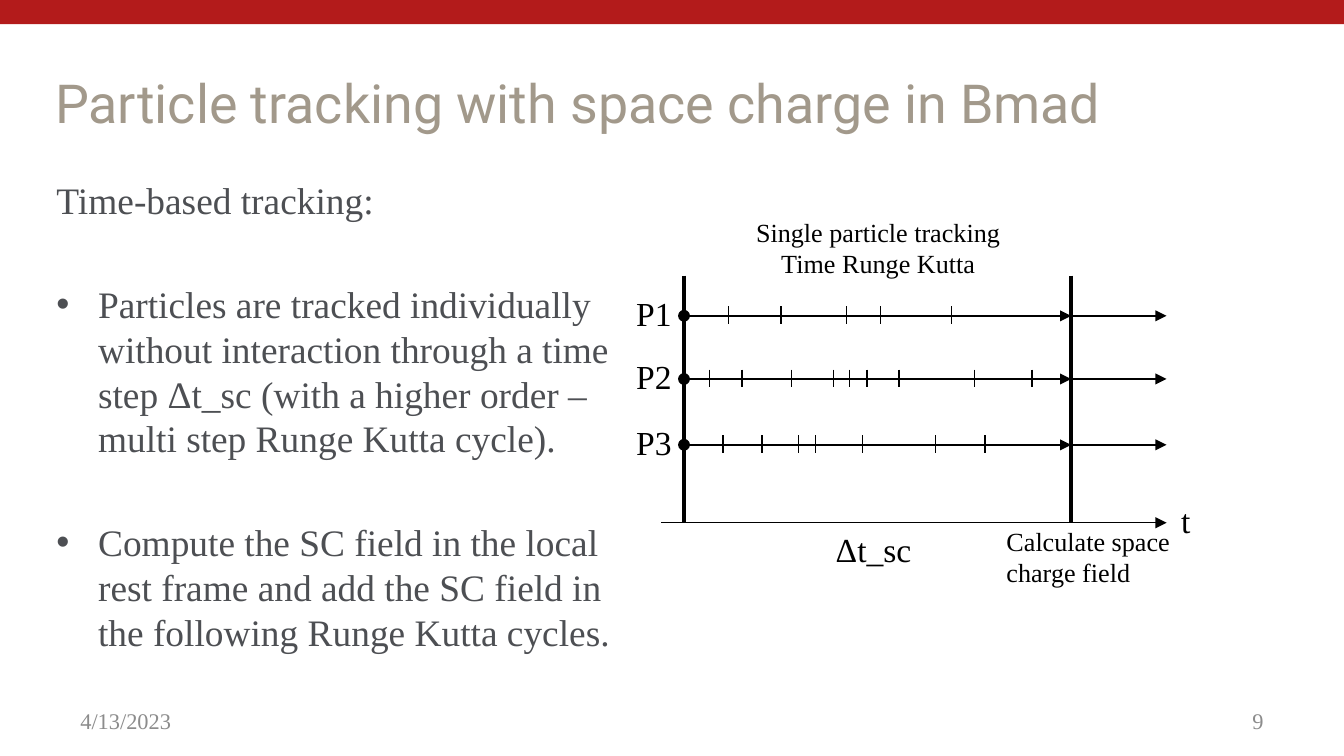
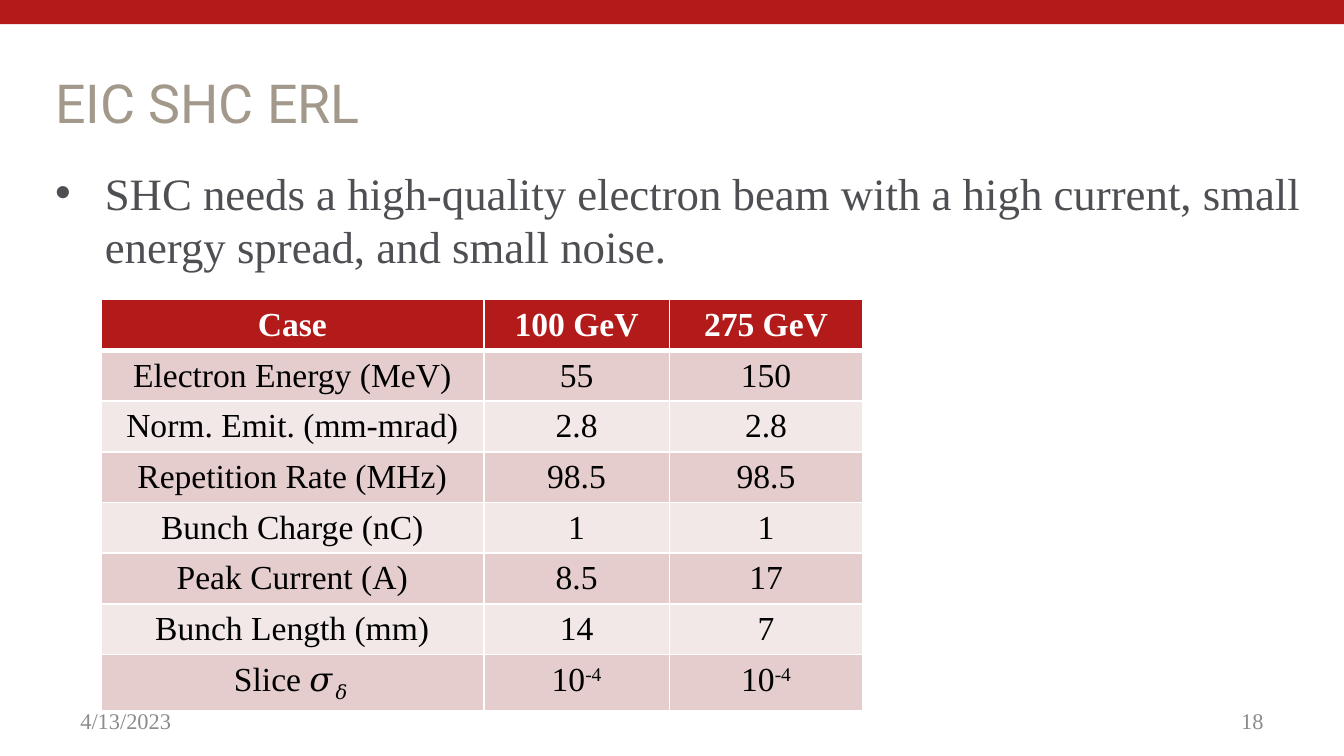
import pptx
import pptx.util
import pptx.dml.color
import pptx.enum.shapes
import pptx.enum.text
import pptx.oxml.ns
import lxml.etree
from dataclasses import dataclass

PX = 9144  # EMU per px, 100 px to the inch


@dataclass(frozen=True)
class Theme:
    red: str = "B31B1B"
    taupe: str = "A2998B"
    slate: str = "4D4F53"
    grey: str = "8C8C8C"
    black: str = "000000"
    white: str = "FFFFFF"
    row_fills: tuple = ("F2E8E8", "E5CDCD")
    heading_font: str = "Roboto"
    text_font: str = "Times New Roman"
    title: float = 28.8
    lead: int = 24
    body: int = 20
    label: int = 18
    caption: int = 14
    footer: int = 12


T = Theme()
RGB = pptx.dml.color.RGBColor.from_string
Pt = pptx.util.Pt
ALIGN = pptx.enum.text.PP_ALIGN
ANCHOR = pptx.enum.text.MSO_ANCHOR
AUTO = pptx.enum.text.MSO_AUTO_SIZE
SHAPE = pptx.enum.shapes.MSO_SHAPE
STRAIGHT = pptx.enum.shapes.MSO_CONNECTOR.STRAIGHT


def write(sp, box, text, size, color, align=ALIGN.LEFT, font=T.text_font,
          anchor=ANCHOR.TOP, fit=AUTO.NONE):
    """Place a text shape and format every run in it."""
    sp.left, sp.top, sp.width, sp.height = [v * PX for v in box]
    tf = sp.text_frame
    tf.text = text
    tf.word_wrap = True
    tf.auto_size = fit
    tf.vertical_anchor = anchor
    for p in tf.paragraphs:
        p.alignment = align
        for r in p.runs:
            r.font.name, r.font.size = font, Pt(size)
            r.font.color.rgb = RGB(color)
    return tf


def line(s, x1, y1, x2, y2, width=0.75, arrow=False):
    """Draw a black straight line, with an arrowhead at its end if asked."""
    c = s.shapes.add_connector(STRAIGHT, x1 * PX, y1 * PX, x2 * PX, y2 * PX)
    c.line.color.rgb = RGB(T.black)
    c.line.width = Pt(width)
    if arrow:
        ln = c.line._get_or_add_ln()
        lxml.etree.SubElement(ln, pptx.oxml.ns.qn("a:tailEnd"), type="triangle")
    lxml.etree.SubElement(c.element.spPr, pptx.oxml.ns.qn("a:effectLst"))


# Slide size: 16 to 9
prs = pptx.Presentation()
prs.slide_width = 1000 * PX
prs.slide_height = prs.slide_width * 9 // 16

# Shared frame, titles and lists: a bullet paragraph has an indent above zero
pages = [
    ("Particle tracking with space charge in Bmad", "9", (32, 127, 443, 371), T.body,
     [("Time-based tracking:", 0),
      ("Particles are tracked individually without interaction through a time step "
       "Δt_sc (with a higher order – multi step Runge Kutta cycle).", 31),
      ("Compute the SC field in the local rest frame and add the SC field in the "
       "following Runge Kutta cycles.", 31)]),
    ("EIC SHC ERL", "18", (31, 118, 949, 388), T.lead,
     [("SHC needs a high-quality electron beam with a high current, small energy "
       "spread, and small noise.", 37)]),
]
for title, number, body_box, size, items in pages:
    s = prs.slides.add_slide(prs.slide_layouts[1])
    write(s.shapes.title, (31, 48, 949, 56), title, T.title, T.taupe,
          font=T.heading_font, anchor=ANCHOR.MIDDLE)
    tf = write(s.placeholders[1], body_box, "\n".join(t for t, _ in items), size, T.slate)
    for i, (p, (_, indent)) in enumerate(zip(tf.paragraphs, items)):
        pPr = p._p.get_or_add_pPr()
        pPr.set("marL", str(indent * PX))
        pPr.set("indent", str(-indent * PX))
        if indent:
            lxml.etree.SubElement(pPr, pptx.oxml.ns.qn("a:buChar"), char="•")
        else:
            lxml.etree.SubElement(pPr, pptx.oxml.ns.qn("a:buNone"))
        p.space_before = Pt(31.5 if i else 0)
    for x, text, align in ((50, "4/13/2023", ALIGN.LEFT), (717, number, ALIGN.RIGHT)):
        write(s.shapes.add_textbox(0, 0, 0, 0), (x, 521, 233, 30), text, T.footer,
              T.grey, align, anchor=ANCHOR.MIDDLE)

tracking, erl = prs.slides

# Top band, moved to the slide master so that both slides show it
band = tracking.shapes.add_shape(SHAPE.RECTANGLE, 0, 0, 1000 * PX, 18 * PX)
band.shadow.inherit = False
band.fill.solid()
band.fill.fore_color.rgb = RGB(T.red)
band.line.fill.background()
prs.slide_master.shapes.element.insert(2, band.element)

# Tracking diagram: time axis and the two ends of the space charge step
START, END, TIP, AXIS = 509, 797, 868, 389
for x in (START, END):
    line(tracking, x, 205, x, AXIS, width=2.25)
line(tracking, 492, AXIS, TIP, AXIS, arrow=True)

# One row per particle, with ticks at its Runge Kutta steps
particles = [
    ("P1", 235, (542, 581, 630, 655, 708)),
    ("P2", 282, (528, 552, 589, 620, 632, 645, 669, 725, 768)),
    ("P3", 331, (538, 567, 594, 607, 642, 696, 733)),
]
for name, y, ticks in particles:
    dot = tracking.shapes.add_shape(SHAPE.OVAL, (START - 3) * PX, (y - 3) * PX, 6 * PX, 6 * PX)
    dot.shadow.inherit = False
    dot.fill.solid()
    dot.fill.fore_color.rgb = RGB(T.black)
    dot.line.color.rgb = RGB(T.black)
    dot.line.width = Pt(2)
    line(tracking, START, y, END, y, arrow=True)
    line(tracking, END, y, TIP, y, arrow=True)
    for x in ticks:
        line(tracking, x, y - 7, x, y + 6)

# Diagram labels
labels = [((457, y - 22, 59, 40), name, T.label, ALIGN.CENTER) for name, y, _ in particles]
labels += [
    ((540, 156, 227, 57), "Single particle tracking\nTime Runge Kutta", T.caption, ALIGN.CENTER),
    ((581, 389, 138, 40), "Δt_sc", T.label, ALIGN.CENTER),
    ((739, 386, 158, 57), "Calculate space charge field", T.caption, ALIGN.LEFT),
    ((869, 367, 28, 40), "t", T.label, ALIGN.LEFT),
]
for box, text, size, align in labels:
    write(tracking.shapes.add_textbox(0, 0, 0, 0), box, text, size, T.black, align,
          fit=AUTO.SHAPE_TO_FIT_TEXT)

# Parameter table: a cell is text, or text with a raised or lowered ending
power = ("10", "-4", 30000)
rows = [
    ("Case", "100 GeV", "275 GeV"),
    ("Electron Energy (MeV)", "55", "150"),
    ("Norm. Emit. (mm-mrad)", "2.8", "2.8"),
    ("Repetition Rate (MHz)", "98.5", "98.5"),
    ("Bunch Charge (nC)", "1", "1"),
    ("Peak Current (A)", "8.5", "17"),
    ("Bunch Length (mm)", "14", "7"),
    (("Slice 𝜎", "𝛿", -25000), power, power),
]
frame = erl.shapes.add_table(len(rows), 3, 75 * PX, 223 * PX, 567 * PX, 320 * PX)
table = frame.table
for column, width in zip(table.columns, (285, 138, 144)):
    column.width = width * PX
for i, values in enumerate(rows):
    table.rows[i].height = 30 * PX
    for j, value in enumerate(values):
        cell = table.cell(i, j)
        tcPr = cell._tc.get_or_add_tcPr()
        for side in "LRTB":
            thick = (i == 0 and side == "B") or (i == 1 and side == "T")
            ln = lxml.etree.SubElement(tcPr, pptx.oxml.ns.qn("a:ln" + side),
                                       w=str(Pt(3 if thick else 1)))
            fill = lxml.etree.SubElement(ln, pptx.oxml.ns.qn("a:solidFill"))
            lxml.etree.SubElement(fill, pptx.oxml.ns.qn("a:srgbClr"), val=T.white)
        cell.fill.solid()
        cell.fill.fore_color.rgb = RGB(T.row_fills[i % 2] if i else T.red)
        base, script, shift = (value, "", 0) if isinstance(value, str) else value
        p = cell.text_frame.paragraphs[0]
        p.text = base
        p.alignment = ALIGN.CENTER
        if script:
            r = p.add_run()
            r.text = script
            r.font._element.set("baseline", str(shift))
        for r in p.runs:
            r.font.name, r.font.size = T.text_font, Pt(T.label)
            r.font.bold = i == 0
            r.font.color.rgb = RGB(T.black if i else T.white)
frame.height = 320 * PX

prs.save("out.pptx")
